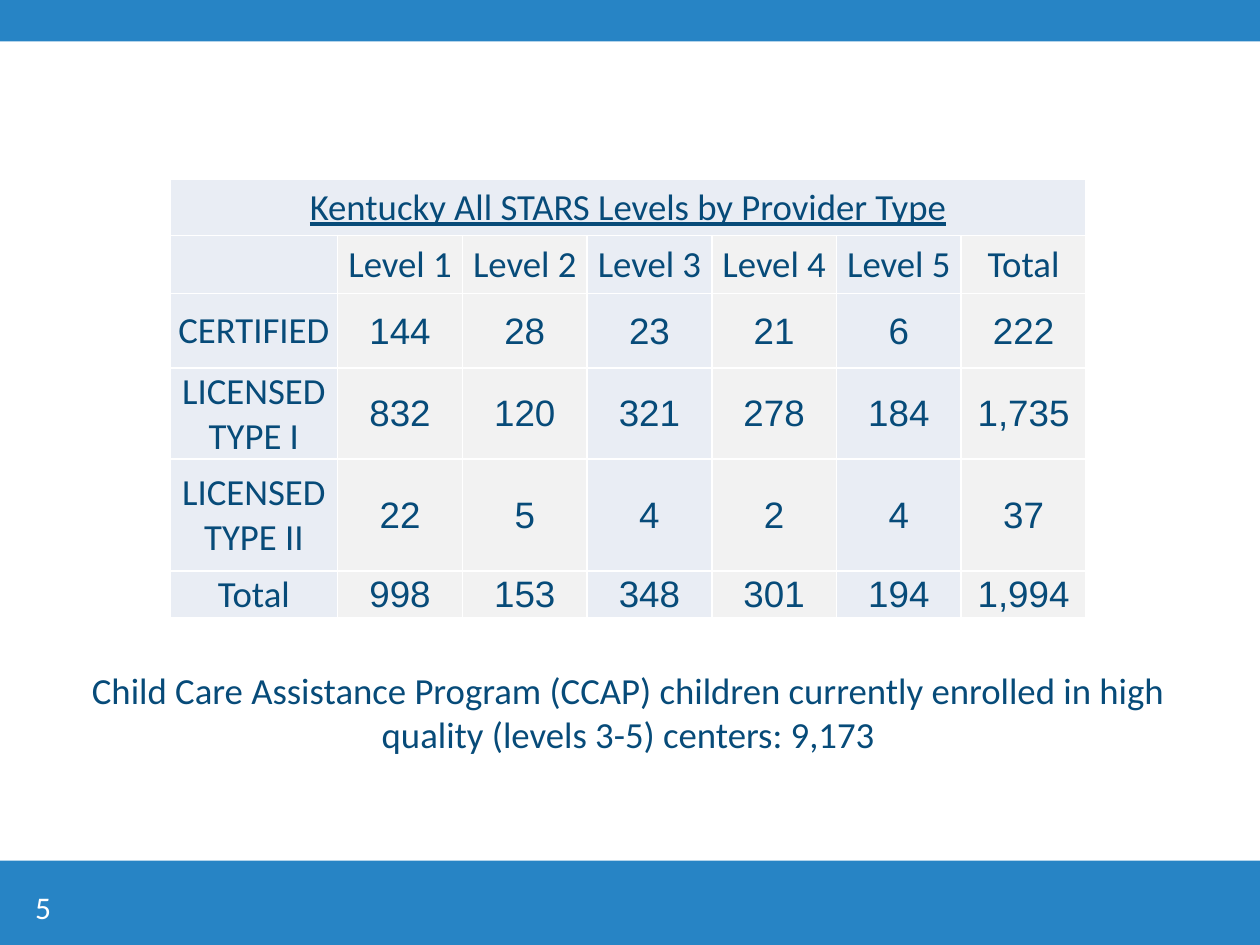
import pptx
import pptx.util
import pptx.dml.color
import pptx.enum.shapes
import pptx.enum.text
import pptx.oxml
import pptx.oxml.ns

Inches, Pt = pptx.util.Inches, pptx.util.Pt
ALIGN = pptx.enum.text.PP_ALIGN
MIDDLE = pptx.enum.text.MSO_ANCHOR.MIDDLE

COLORS = {"band": "2784C5", "text": "074B79", "white": "FFFFFF",
          "tint": "E9EDF4", "gray": "F2F2F2"}

TITLE = "Kentucky All STARS Levels by Provider Type"
HEADINGS = ["", "Level 1", "Level 2", "Level 3", "Level 4", "Level 5", "Total"]
PROVIDERS = [
    ("CERTIFIED", "144", "28", "23", "21", "6", "222"),
    ("LICENSED TYPE I", "832", "120", "321", "278", "184", "1,735"),
    ("LICENSED TYPE II", "22", "5", "4", "2", "4", "37"),
    ("Total", "998", "153", "348", "301", "194", "1,994"),
]
ENROLLMENT = ("Child Care Assistance Program (CCAP) children currently enrolled "
              "in high quality (levels 3-5) centers: 9,173")
PAGE_NUMBER = "5"

BANDS = [(0, 0.33), (6.83, 0.67)]  # top, height
COLUMN_WIDTHS = [1.33] + [0.99] * 6
ROW_HEIGHTS = [0.45, 0.46, 0.59, 0.71, 0.89, 0.36]
TINTED_COLUMNS = {0, 3, 5}


def rgb(name):
    return pptx.dml.color.RGBColor.from_string(COLORS[name])


def write(frame, text, size, color="text", font="Calibri", align=ALIGN.CENTER):
    paragraph = frame.paragraphs[0]
    paragraph.text = text
    paragraph.alignment = align
    paragraph.font.size = Pt(size)
    paragraph.font.name = font
    paragraph.font.color.rgb = rgb(color)
    return paragraph


def add_text(slide, box, text, size, **style):
    frame = slide.shapes.add_textbox(*map(Inches, box)).text_frame
    frame.word_wrap = True
    write(frame, text, size, **style)


def add_borders(cell):
    properties = cell._tc.get_or_add_tcPr()
    for side in ("lnL", "lnR", "lnT", "lnB"):
        properties.append(pptx.oxml.parse_xml(
            f'<a:{side} {pptx.oxml.ns.nsdecls("a")} w="{Pt(1)}"><a:solidFill>'
            f'<a:srgbClr val="{COLORS["white"]}"/></a:solidFill></a:{side}>'))


def style_cell(cell, fill):
    add_borders(cell)
    cell.fill.solid()
    cell.fill.fore_color.rgb = rgb(fill)
    cell.vertical_anchor = MIDDLE
    cell.margin_left = cell.margin_right = cell.margin_top = Inches(0.01)
    cell.margin_bottom = 0


def add_levels_table(slide):
    rows = [[TITLE] + [""] * 6, HEADINGS, *PROVIDERS]
    table = slide.shapes.add_table(
        len(rows), len(HEADINGS), Inches(1.35), Inches(1.42),
        Inches(sum(COLUMN_WIDTHS)), Inches(sum(ROW_HEIGHTS))).table
    for column, width in zip(table.columns, COLUMN_WIDTHS):
        column.width = Inches(width)
    for row, height in zip(table.rows, ROW_HEIGHTS):
        row.height = Inches(height)

    for r, row in enumerate(rows):
        for c, text in enumerate(row):
            cell = table.cell(r, c)
            tinted = r == 0 or c in TINTED_COLUMNS
            style_cell(cell, "tint" if tinted else "gray")
            if text:
                is_count = r > 1 and c > 0
                write(cell.text_frame, text, 21, font="Arial" if is_count else "Calibri")
    table.cell(0, 0).merge(table.cell(0, len(HEADINGS) - 1))
    table.cell(0, 0).text_frame.paragraphs[0].font.underline = True


def main():
    deck = pptx.Presentation()
    deck.slide_width, deck.slide_height = Inches(10), Inches(7.5)
    slide = deck.slides.add_slide(deck.slide_layouts[6])

    for top, height in BANDS:
        band = slide.shapes.add_shape(
            pptx.enum.shapes.MSO_SHAPE.RECTANGLE,
            0, Inches(top), deck.slide_width, Inches(height))
        band.shadow.inherit = False
        band.fill.solid()
        band.fill.fore_color.rgb = rgb("band")
        band.line.fill.background()

    add_levels_table(slide)
    add_text(slide, (0.29, 5.25, 9.39, 0.81), ENROLLMENT, 21)
    add_text(slide, (0.18, 7, 2.33, 0.4), PAGE_NUMBER, 18, color="white", align=ALIGN.LEFT)
    deck.save("out.pptx")


if __name__ == "__main__":
    main()
